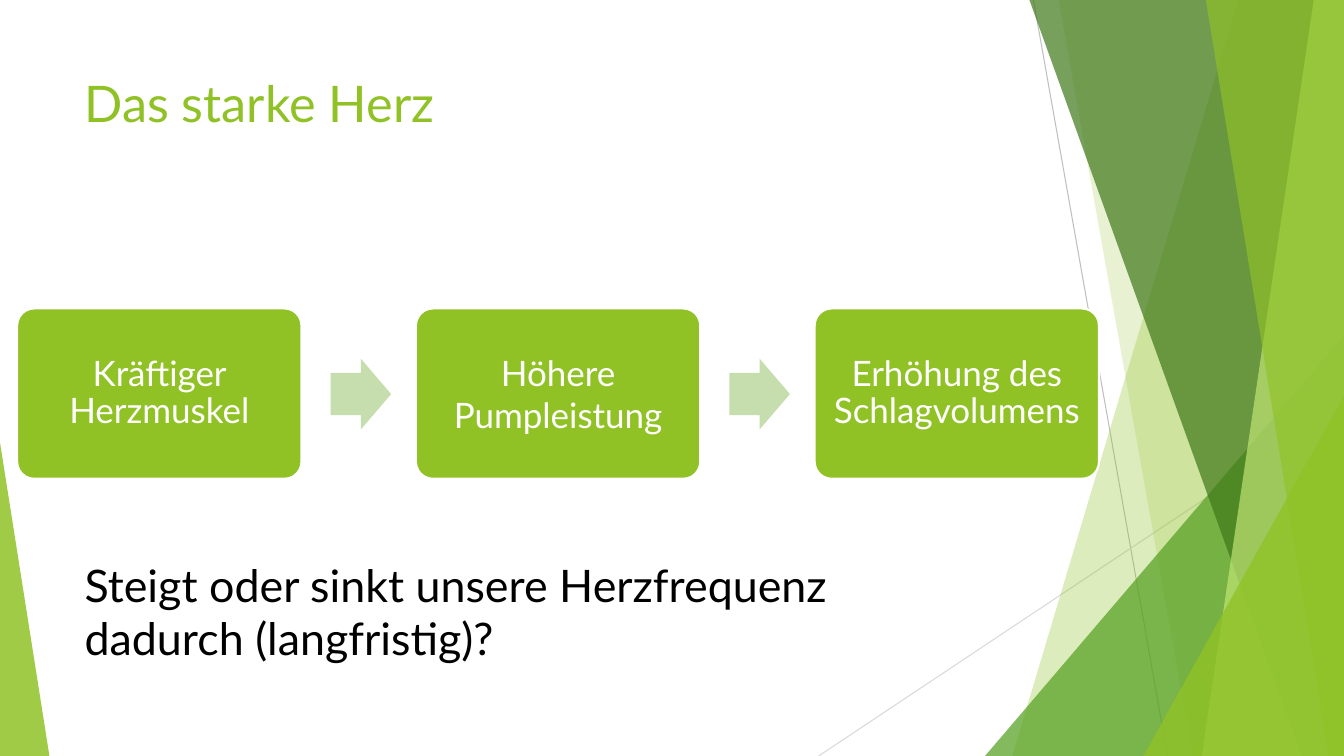
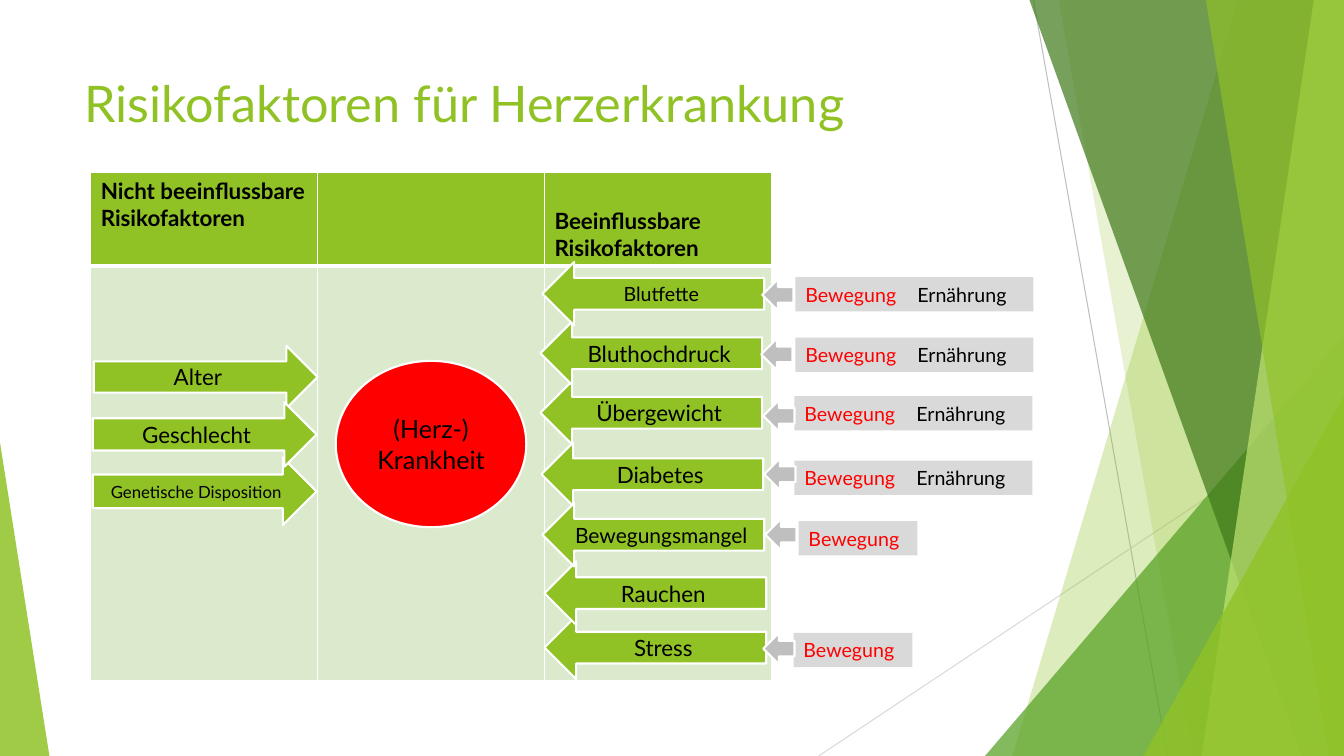
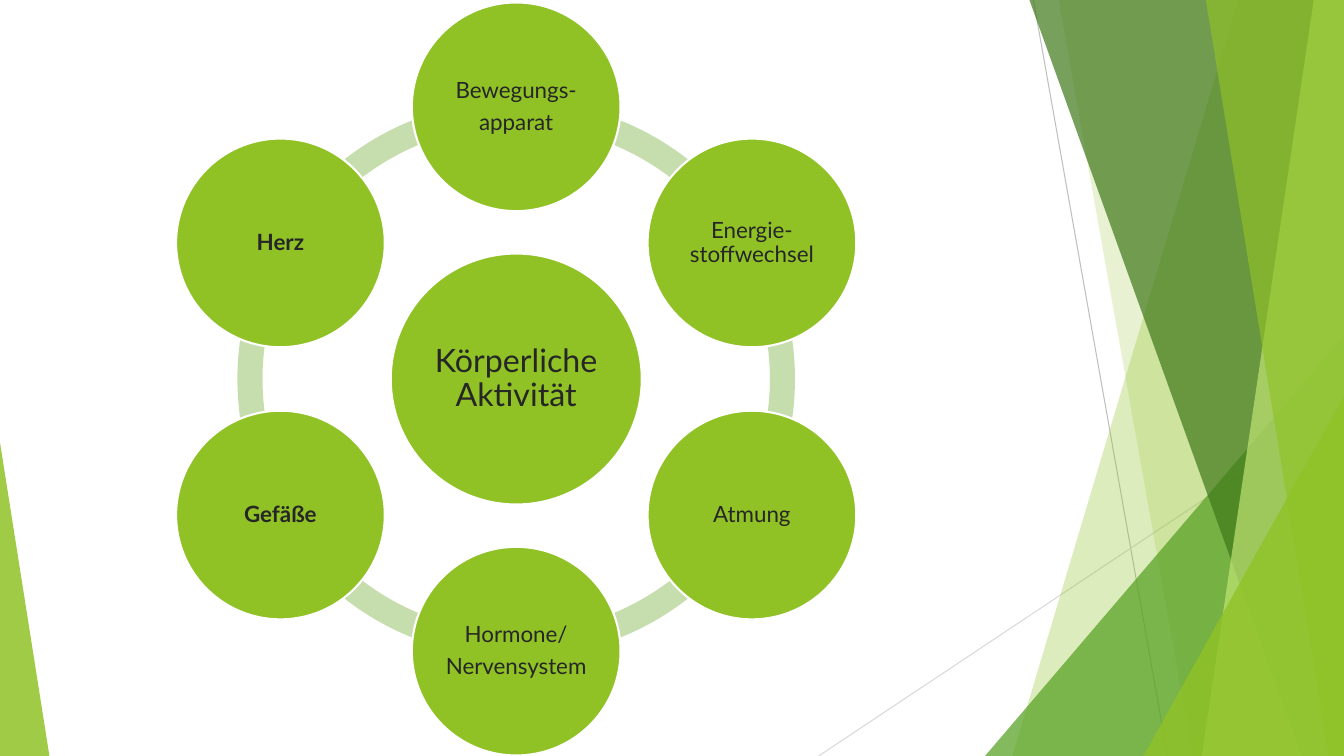
from dataclasses import dataclass
from math import cos, radians, sin

from lxml.etree import SubElement
from pptx import Presentation
from pptx.dml.color import RGBColor
from pptx.enum.shapes import MSO_CONNECTOR, MSO_SHAPE
from pptx.enum.text import MSO_ANCHOR, PP_ALIGN
from pptx.oxml.ns import qn
from pptx.shapes.autoshape import Shape
from pptx.slide import Slide
from pptx.table import _Cell as Cell
from pptx.text.text import TextFrame
from pptx.util import Inches, Pt


@dataclass(frozen=True)
class Theme:
    font: str = "Lato"
    lime: str = "90C226"
    leaf: str = "54A021"
    forest: str = "3F7819"
    pale: str = "C0E474"
    soft: str = "C6DDAD"
    table_body: str = "DBE9CD"
    red: str = "FF0000"
    white: str = "FFFFFF"
    black: str = "000000"
    charcoal: str = "262626"
    grey: str = "BFBFBF"
    light_grey: str = "D9D9D9"
    title_size: int = 36
    question_size: int = 32
    step_size: int = 25
    hub_size: int = 23
    disease_size: int = 18
    body_size: int = 16
    tag_size: int = 14
    outline: float = 1.5


@dataclass(frozen=True)
class Band:
    """Translucent area from a slanted left edge to the right slide edge."""
    top_x: float
    bottom_x: float
    color: str
    opacity: int


@dataclass(frozen=True)
class Wedge:
    """Translucent triangle standing on the bottom slide edge."""
    left: float
    top: float
    width: float
    apex: float
    color: str
    opacity: int


@dataclass(frozen=True)
class Ray:
    start: tuple[float, float]
    end: tuple[float, float]
    color: str


@dataclass(frozen=True)
class FixedFactor:
    label: str
    left: float
    top: float
    height: float
    size: int


@dataclass(frozen=True)
class Remedy:
    left: float
    top: float
    pointer_left: float
    pointer_top: float
    nutrition: bool = True


@dataclass(frozen=True)
class Factor:
    label: str
    left: float
    top: float
    size: int
    remedy: Remedy | None


@dataclass(frozen=True)
class Node:
    lines: tuple[str, ...]
    bold: bool = False


THEME = Theme()
WIDTH, HEIGHT = 13.33, 7.5

RAYS = (
    Ray((10.25, 0), (11.58, HEIGHT), THEME.grey),
    Ray((WIDTH, 4.03), (8.12, HEIGHT), THEME.light_grey),
)
FACETS = (
    Band(12.28, 10.04, THEME.lime, 30),
    Band(10.5, 11.83, THEME.lime, 20),
    Wedge(9.77, 3.33, 3.56, 1, THEME.leaf, 72),
    Band(10.21, 12.91, THEME.forest, 70),
    Band(13.03, 11.92, THEME.pale, 70),
    Band(11.96, 13.18, THEME.lime, 65),
    Wedge(11.34, 3.93, 1.99, 1, THEME.lime, 80),
    Wedge(0, 4.39, 0.49, 0, THEME.lime, 85),
)
STEPS = (
    ("Kräftiger Herzmuskel", 0.9),
    ("Höhere Pumpleistung", 1.0),
    ("Erhöhung des Schlagvolumens", 0.9),
)
FIXED_FACTORS = (
    FixedFactor("Alter", 0.93, 3.43, 0.62, 16),
    FixedFactor("Genetische Disposition", 0.92, 4.54, 0.67, 12),
    FixedFactor("Geschlecht", 0.92, 3.99, 0.64, 16),
)
FACTORS = (
    Factor("Stress", 5.4, 6.11, 16, Remedy(7.87, 6.28, 7.57, 6.28, False)),
    Factor("Diabetes", 5.37, 4.39, 16, Remedy(7.88, 4.57, 7.58, 4.55)),
    Factor("Rauchen", 5.4, 5.57, 16, None),
    Factor("Übergewicht", 5.36, 3.78, 16, Remedy(7.88, 3.93, 7.57, 3.97)),
    Factor("Bluthochdruck", 5.36, 3.19, 16, Remedy(7.89, 3.35, 7.55, 3.36)),
    Factor("Bewegungsmangel", 5.38, 4.99, 15,
           Remedy(7.92, 5.17, 7.59, 5.15, False)),
    Factor("Blutfette", 5.38, 2.6, 14, Remedy(7.89, 2.75, 7.56, 2.77)),
)
NODES = (
    Node(("Bewegungs-", "apparat")),
    Node(("Energie-\nstoffwechsel",)),
    Node(("Atmung",)),
    Node(("Hormone/", "Nervensystem")),
    Node(("Gefäße",), True),
    Node(("Herz",), True),
)


def rgb(color: str) -> RGBColor:
    return RGBColor.from_string(color)


def style(shape: Shape, fill: str, outlined: bool = False,
          opacity: int = 100) -> None:
    shape.shadow.inherit = False
    shape.fill.solid()
    shape.fill.fore_color.rgb = rgb(fill)
    if opacity < 100:
        color = shape.fill._xPr.find(f".//{qn('a:srgbClr')}")
        SubElement(color, qn("a:alpha"), val=str(opacity * 1000))
    if outlined:
        shape.line.color.rgb = rgb(THEME.white)
        shape.line.width = Pt(THEME.outline)
    else:
        shape.line.fill.background()


def add_preset(slide: Slide, preset: MSO_SHAPE, left: float, top: float,
               width: float, height: float, fill: str, outlined: bool = False,
               adjustments: tuple[float, ...] = (), opacity: int = 100) -> Shape:
    shape = slide.shapes.add_shape(
        preset, Inches(left), Inches(top), Inches(width), Inches(height))
    for index, value in enumerate(adjustments):
        shape.adjustments[index] = value
    style(shape, fill, outlined, opacity)
    return shape


def write(frame: TextFrame, lines: tuple[str, ...], size: int, color: str,
          align: PP_ALIGN = PP_ALIGN.CENTER, bold: bool = False,
          line_spacing: float = 1.0, gap: float = 0,
          inset: float | None = None) -> None:
    """Fill a frame with one paragraph per line, gap points apart."""
    frame.word_wrap = True
    if inset is not None:
        frame.margin_left = frame.margin_right = Inches(inset)
        frame.margin_top = frame.margin_bottom = Inches(inset)
    for index, line in enumerate(lines):
        paragraph = frame.paragraphs[0] if index == 0 else frame.add_paragraph()
        paragraph.text = line
        paragraph.alignment = align
        paragraph.line_spacing = line_spacing
        if index:
            paragraph.space_before = Pt(gap)
        for run in paragraph.runs:
            format_run(run, size, color, bold)


def format_run(run, size: int, color: str, bold: bool = False) -> None:
    run.font.name = THEME.font
    run.font.size = Pt(size)
    run.font.bold = bold
    run.font.color.rgb = rgb(color)


def add_text(slide: Slide, left: float, top: float, width: float,
             height: float, text: str, size: int, color: str) -> None:
    box = slide.shapes.add_textbox(
        Inches(left), Inches(top), Inches(width), Inches(height))
    write(box.text_frame, (text,), size, color, PP_ALIGN.LEFT)


def add_facets(slide: Slide) -> None:
    for ray in RAYS:
        line = slide.shapes.add_connector(
            MSO_CONNECTOR.STRAIGHT, *map(Inches, ray.start + ray.end))
        line.line.color.rgb = rgb(ray.color)
        line.line.width = Pt(0.75)
        SubElement(line._element.spPr, qn("a:effectLst"))
    for facet in FACETS:
        if isinstance(facet, Wedge):
            add_preset(slide, MSO_SHAPE.ISOSCELES_TRIANGLE, facet.left,
                       facet.top, facet.width, HEIGHT - facet.top, facet.color,
                       adjustments=(facet.apex,), opacity=facet.opacity)
        else:
            builder = slide.shapes.build_freeform(Inches(facet.top_x), 0)
            corners = ((WIDTH, 0), (WIDTH, HEIGHT), (facet.bottom_x, HEIGHT))
            builder.add_line_segments(
                [(Inches(x), Inches(y)) for x, y in corners], close=True)
            style(builder.convert_to_shape(), facet.color,
                  opacity=facet.opacity)


def new_slide(presentation: Presentation, title: str = "") -> Slide:
    slide = presentation.slides.add_slide(presentation.slide_layouts[6])
    add_facets(slide)
    if title:
        add_text(slide, 0.74, 0.67, 9.4, 1.44, title, THEME.title_size,
                 THEME.lime)
    return slide


def build_heart_slide(presentation: Presentation) -> None:
    slide = new_slide(presentation, "Das starke Herz")
    first_left, last_left = 0.17, 8.08
    pitch = (last_left - first_left) / (len(STEPS) - 1)
    for index, (label, spacing) in enumerate(STEPS):
        left = first_left + index * pitch
        box = add_preset(slide, MSO_SHAPE.ROUNDED_RECTANGLE, left, 3.06, 2.82,
                         1.69, THEME.lime, True, (0.1,))
        write(box.text_frame, (label,), THEME.step_size, THEME.white,
              line_spacing=spacing, inset=0.1)
        if index < len(STEPS) - 1:
            add_preset(slide, MSO_SHAPE.RIGHT_ARROW, left + 3.11, 3.56, 0.6,
                       0.7, THEME.soft, adjustments=(0.6, 0.5))
    add_text(slide, 0.74, 5.48, 7.57, 1.18,
             "Steigt oder sinkt unsere Herzfrequenz dadurch (langfristig)?",
             THEME.question_size, THEME.black)


def set_cell_borders(cell: Cell, bottom_width: float) -> None:
    properties = cell._tc.get_or_add_tcPr()
    widths = {"a:lnL": 1, "a:lnR": 1, "a:lnT": 1, "a:lnB": bottom_width}
    for index, (side, width) in enumerate(widths.items()):
        line = properties.makeelement(qn(side), {"w": str(Pt(width))})
        fill = SubElement(line, qn("a:solidFill"))
        SubElement(fill, qn("a:srgbClr"), val=THEME.white)
        properties.insert(index, line)


def add_risk_table(slide: Slide) -> None:
    table = slide.shapes.add_table(
        2, 3, Inches(0.9), Inches(1.71), Inches(6.75), Inches(5.04)).table
    for column in table.columns:
        column.width = Inches(2.25)
    rows = ((0.93, THEME.lime, 3), (4.11, THEME.table_body, 1))
    for row, (height, fill, bottom_width) in zip(table.rows, rows):
        row.height = Inches(height)
        for cell in row.cells:
            cell.fill.solid()
            cell.fill.fore_color.rgb = rgb(fill)
            set_cell_borders(cell, bottom_width)
    headings = (
        (0, "Nicht beeinflussbare Risikofaktoren", MSO_ANCHOR.TOP),
        (2, "Beeinflussbare Risikofaktoren", MSO_ANCHOR.BOTTOM),
    )
    for column, heading, anchor in headings:
        cell = table.cell(0, column)
        cell.vertical_anchor = anchor
        write(cell.text_frame, (heading,), THEME.body_size, THEME.black,
              PP_ALIGN.LEFT, bold=True)


def add_remedy(slide: Slide, remedy: Remedy) -> None:
    tag = add_preset(slide, MSO_SHAPE.RECTANGLE, remedy.left, remedy.top,
                     2.36 if remedy.nutrition else 1.18, 0.34,
                     THEME.light_grey)
    write(tag.text_frame, ("Bewegung",), THEME.tag_size, THEME.red,
          PP_ALIGN.LEFT)
    if remedy.nutrition:
        paragraph = tag.text_frame.paragraphs[0]
        tabs = SubElement(paragraph._p.get_or_add_pPr(), qn("a:tabLst"))
        SubElement(tabs, qn("a:tab"), pos=str(Inches(1.11)), algn="l")
        run = paragraph.add_run()
        run.text = "\tErnährung"
        format_run(run, THEME.tag_size, THEME.black)
    add_preset(slide, MSO_SHAPE.LEFT_ARROW, remedy.pointer_left,
               remedy.pointer_top, 0.31, 0.31, THEME.grey, True)


def build_risk_slide(presentation: Presentation) -> None:
    slide = new_slide(presentation, "Risikofaktoren für Herzerkrankung")
    add_risk_table(slide)
    disease = add_preset(slide, MSO_SHAPE.OVAL, 3.33, 3.58, 1.89, 1.65,
                         THEME.red, True)
    write(disease.text_frame, ("(Herz-)", "Krankheit"), THEME.disease_size,
          THEME.black)
    for factor in FIXED_FACTORS:
        arrow = add_preset(slide, MSO_SHAPE.RIGHT_ARROW, factor.left,
                           factor.top, 2.22, factor.height, THEME.lime, True)
        write(arrow.text_frame, (factor.label,), factor.size, THEME.black)
    for factor in FACTORS:
        arrow = add_preset(slide, MSO_SHAPE.LEFT_ARROW, factor.left,
                           factor.top, 2.2, 0.63, THEME.lime, True)
        write(arrow.text_frame, (factor.label,), factor.size, THEME.black)
        if factor.remedy:
            add_remedy(slide, factor.remedy)


def add_disc(slide: Slide, center_x: float, center_y: float, diameter: float,
             node: Node, size: int) -> None:
    disc = add_preset(slide, MSO_SHAPE.OVAL, center_x - diameter / 2,
                      center_y - diameter / 2, diameter, diameter, THEME.lime,
                      True)
    write(disc.text_frame, node.lines, size, THEME.charcoal, bold=node.bold,
          line_spacing=0.9, gap=0.35 * size, inset=0.02)


def build_activity_slide(presentation: Presentation) -> None:
    slide = new_slide(presentation)
    center_x, center_y, orbit, ring = 5.12, 3.76, 2.7, 5.53
    add_preset(slide, MSO_SHAPE.DONUT, center_x - ring / 2,
               center_y - ring / 2, ring, ring, THEME.soft,
               adjustments=(0.045,))
    add_disc(slide, center_x, center_y, 2.49,
             Node(("Körperliche Aktivität",)), THEME.hub_size)
    for index, node in enumerate(NODES):
        angle = radians(index * 360 / len(NODES) - 90)
        add_disc(slide, center_x + orbit * cos(angle),
                 center_y + orbit * sin(angle), 2.07, node, THEME.body_size)


def main() -> None:
    presentation = Presentation()
    presentation.slide_width = Inches(WIDTH)
    presentation.slide_height = Inches(HEIGHT)
    build_heart_slide(presentation)
    build_risk_slide(presentation)
    build_activity_slide(presentation)
    presentation.save("out.pptx")


if __name__ == "__main__":
    main()
